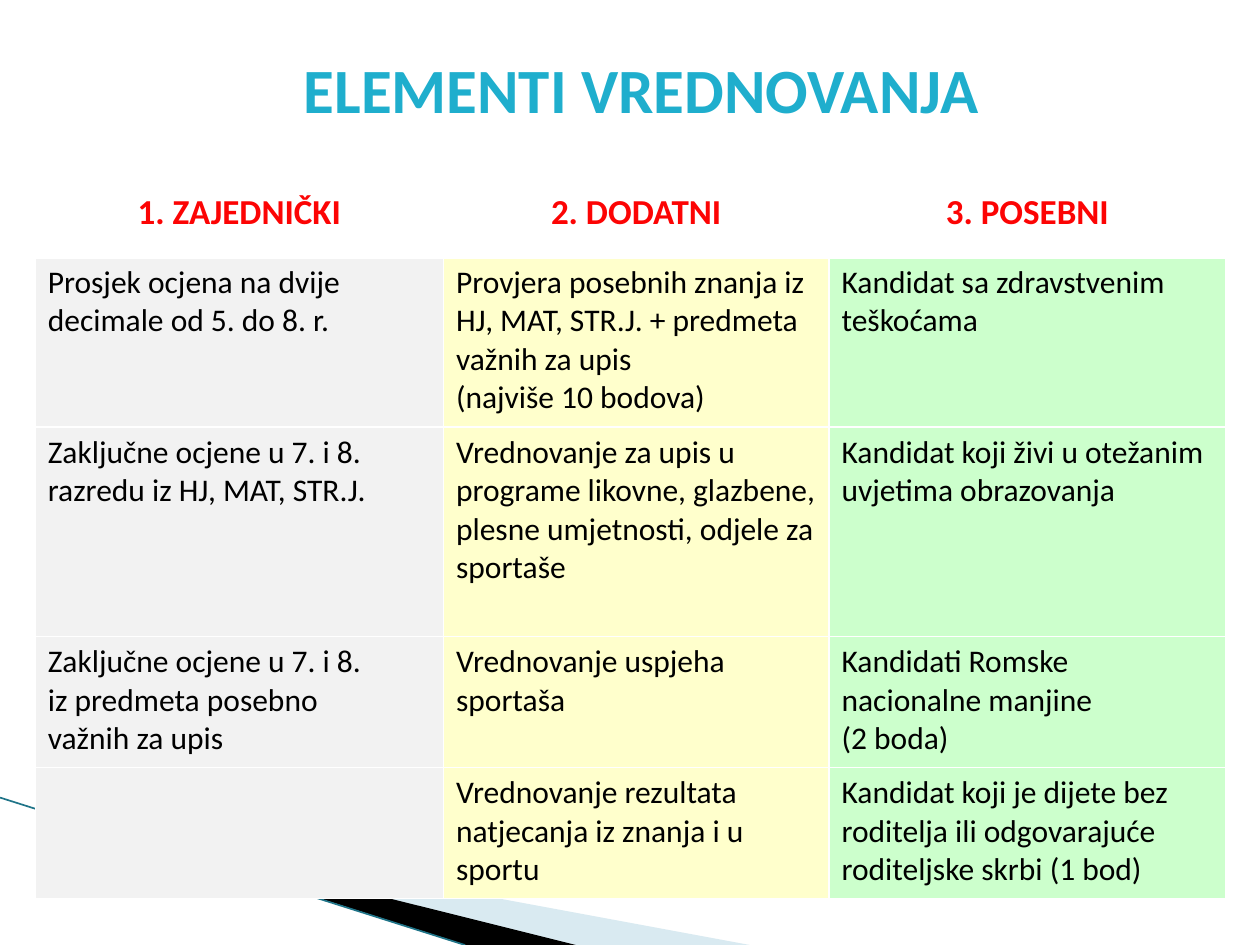
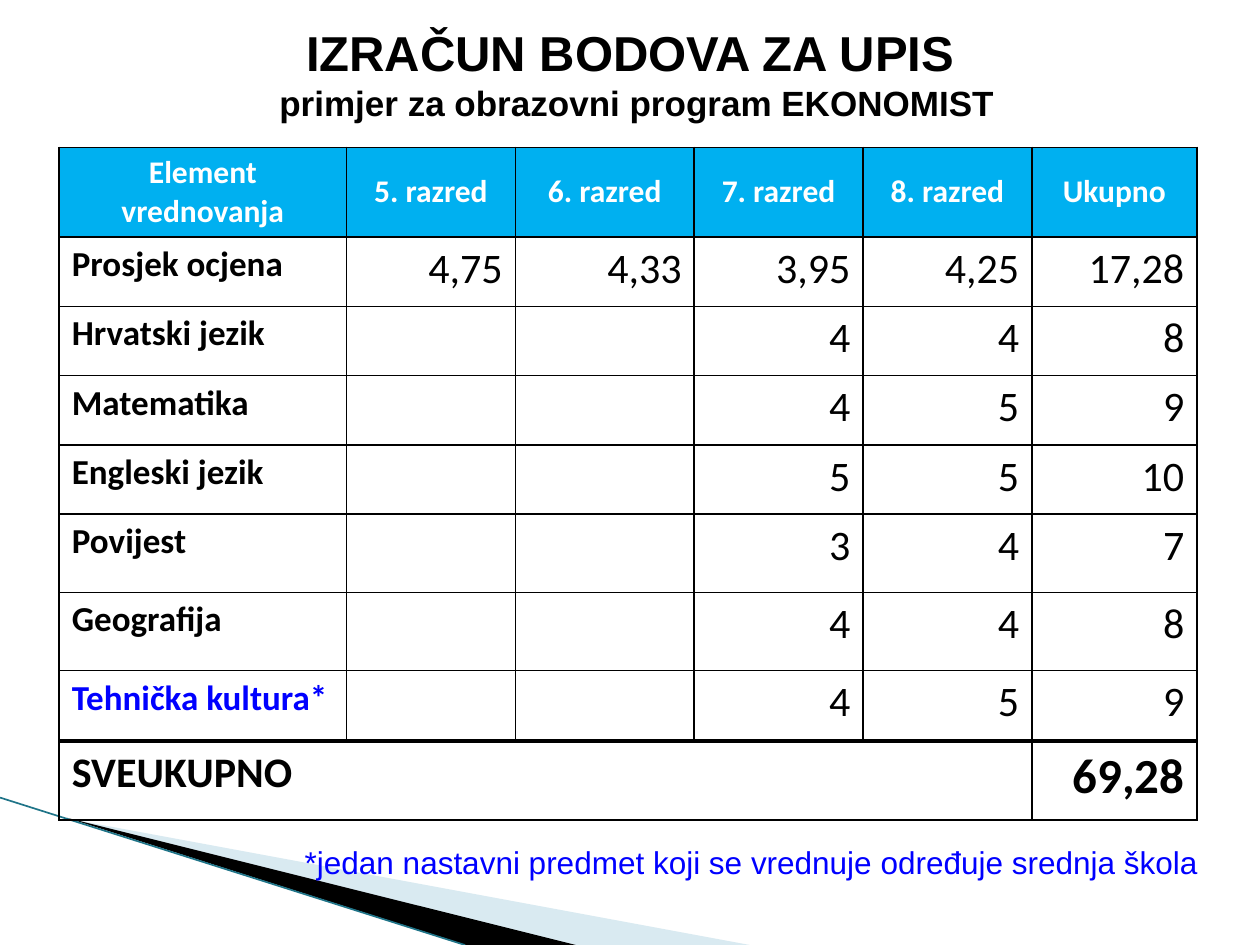
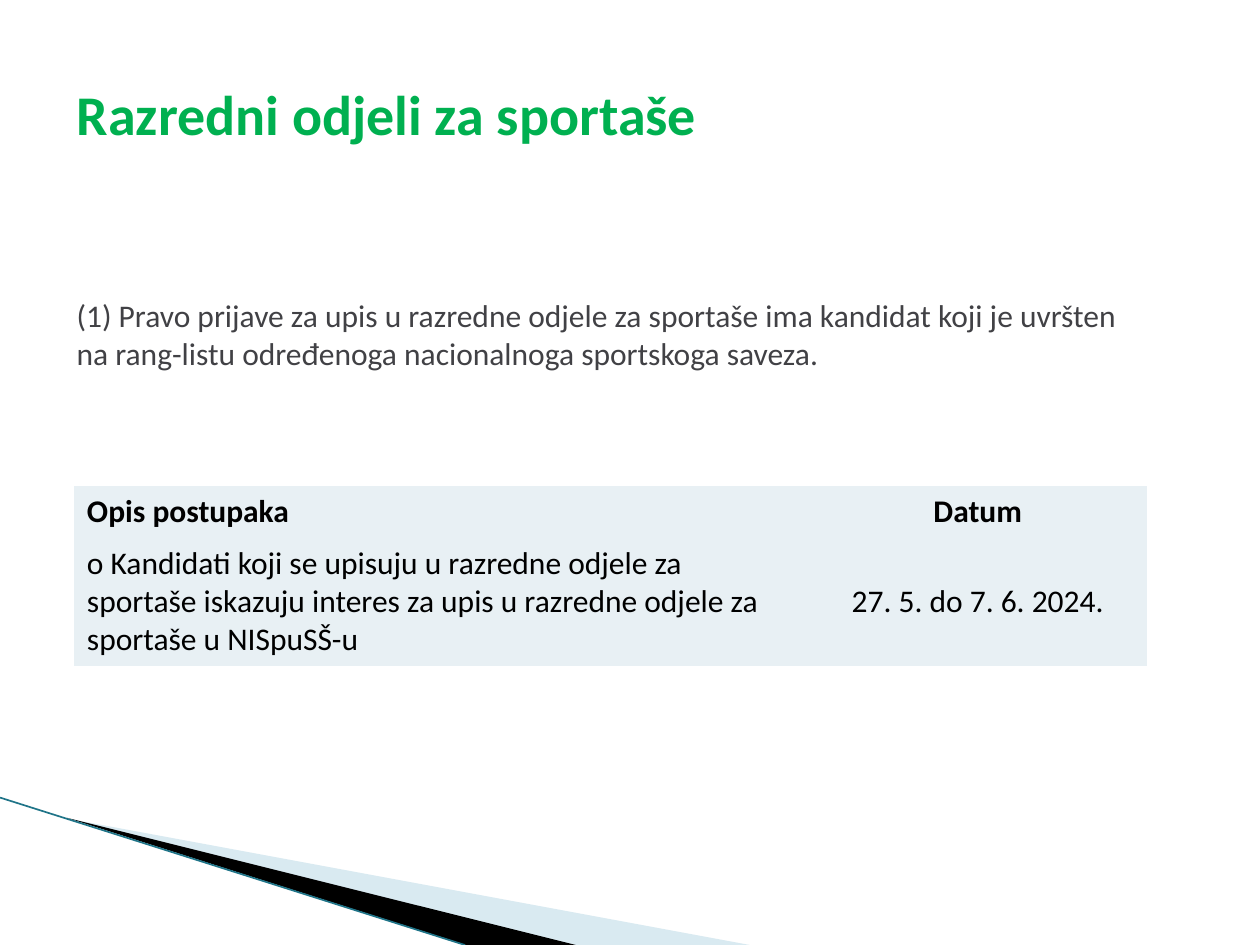
from lxml.etree import SubElement
from pptx import Presentation
from pptx.dml.color import RGBColor
from pptx.enum.shapes import MSO_CONNECTOR
from pptx.enum.text import MSO_ANCHOR as ANCHOR, MSO_AUTO_SIZE as AUTO, PP_ALIGN as AL
from pptx.oxml.ns import qn
from pptx.util import Inches, Pt

C = {
    "black": "000000", "white": "FFFFFF", "red": "FC0404", "teal": "1FAECD",
    "blue": "0000FF", "green": "00B050", "header": "00B0F0", "text": "414145",
    "gray": "F2F2F2", "yellow": "FFFFCC", "mint": "CCFFCC", "ice": "E8F0F4",
    "wedge": "A0CBDC", "edge": "1F7488",
}
NO_STYLE = "{2D5ABB26-0587-4C30-8999-92F81FD0307C}"


def write(p, text, size=18, color="black", bold=False, align=AL.LEFT, font="Calibri"):
    p.text = text
    p.alignment = align
    for r in p.runs:
        r.font.name = font
        r.font.size = Pt(size)
        r.font.bold = bold
        r.font.color.rgb = RGBColor.from_string(C[color])


def make_table(s, x, y, widths, heights, line=None, heavy_row=None, heavy=1):
    frame = s.shapes.add_table(len(heights), len(widths), Inches(x), Inches(y),
                               Inches(sum(widths)), Inches(sum(heights)))
    table = frame.table
    table._tbl.tblPr.find(qn("a:tableStyleId")).text = NO_STYLE
    for col, w in zip(table.columns, widths):
        col.width = Inches(w)
    for i, h in enumerate(heights):
        table.rows[i].height = Inches(h)
        for cell in table.rows[i].cells:
            for side in "LRTB" if line else "":
                thick = (side, i) in (("B", heavy_row), ("T", (heavy_row or 0) + 1))
                ln = SubElement(cell._tc.get_or_add_tcPr(), qn("a:ln" + side),
                                w=str(Pt(heavy if thick else 1)))
                SubElement(SubElement(ln, qn("a:solidFill")), qn("a:srgbClr"), val=C[line])
            cell.fill.background()
    return table


prs = Presentation()
prs.slide_width, prs.slide_height = Inches(10), Inches(7.5)
slides = [prs.slides.add_slide(prs.slide_layouts[5]) for _ in range(3)]

s = slides[0]
decor = []
for color, points in (("wedge", [(55, 650), (595, 750), (456, 750)]),
                      ("black", [(53, 649), (457, 750), (370, 750)])):
    outline = s.shapes.build_freeform(*points[0], scale=Inches(0.01))
    outline.add_line_segments(points[1:], close=True)
    sp = outline.convert_to_shape()
    sp.shadow.inherit = False
    sp.fill.solid()
    sp.fill.fore_color.rgb = RGBColor.from_string(C[color])
    sp.line.fill.background()
    if color == "wedge":
        SubElement(sp.element.spPr.find(".//" + qn("a:srgbClr")), qn("a:alpha"), val="40000")
    decor.append(sp)
edge = s.shapes.add_connector(MSO_CONNECTOR.STRAIGHT, Inches(0), Inches(6.33),
                              Inches(3.69), Inches(7.5))
edge.line.color.rgb = RGBColor.from_string(C["edge"])
edge.line.width = Pt(0.95)
SubElement(edge.element.spPr, qn("a:effectLst"))
for i, sp in enumerate(decor + [edge]):
    prs.slide_master.shapes.element.insert(2 + i, sp.element)

title_boxes = [(0.59, 0.13, 9, 1.14), (0.6, 0.13, 8.91, 0.91), (0.51, 0.35, 6.46, 1.1)]
for s, box in zip(slides, title_boxes):
    title = s.shapes.title
    title.left, title.top, title.width, title.height = map(Inches, box)
    title.text_frame.auto_size = AUTO.NONE
    title.text_frame.vertical_anchor = ANCHOR.MIDDLE

s = slides[0]
write(s.shapes.title.text_frame.paragraphs[0], "ELEMENTI VREDNOVANJA",
      size=36, color="teal", bold=True, align=AL.CENTER)
elements = [
    ["1. ZAJEDNIČKI", "2. DODATNI", "3. POSEBNI"],
    ["Prosjek ocjena na dvije decimale od 5. do 8. r.",
     "Provjera posebnih znanja iz HJ, MAT, STR.J. + predmeta važnih za upis\v(najviše 10 bodova)",
     "Kandidat sa zdravstvenim teškoćama"],
    ["Zaključne ocjene u 7. i 8. razredu iz HJ, MAT, STR.J.",
     "Vrednovanje za upis u programe likovne, glazbene, plesne umjetnosti, odjele za sportaše",
     "Kandidat koji živi u otežanim uvjetima obrazovanja"],
    ["Zaključne ocjene u 7. i 8. \viz predmeta posebno \vvažnih za upis",
     "Vrednovanje uspjeha sportaša",
     "Kandidati Romske nacionalne manjine \v(2 boda)"],
    ["",
     "Vrednovanje rezultata natjecanja iz znanja i u sportu",
     "Kandidat koji je dijete bez roditelja ili odgovarajuće roditeljske skrbi (1 bod)"],
]
table = make_table(s, 0.28, 1.47, [3.24, 3.06, 3.15], [0.57, 1.35, 1.66, 1.04, 1.04],
                   line="white", heavy_row=0, heavy=3)
for i, row in enumerate(elements):
    for j, (text, fill) in enumerate(zip(row, ("gray", "yellow", "mint"))):
        cell = table.cell(i, j)
        cell.fill.solid()
        cell.fill.fore_color.rgb = RGBColor.from_string(C[fill if i else "white"])
        p = cell.text_frame.paragraphs[0]
        if i == 0:
            write(p, text, size=20, color="red", bold=True, align=AL.CENTER)
        elif text:
            write(p, text)

s = slides[1]
tf = s.shapes.title.text_frame
tf.vertical_anchor = ANCHOR.TOP
heading = {"bold": True, "align": AL.CENTER, "font": "Arial"}
write(tf.paragraphs[0], "IZRAČUN BODOVA ZA UPIS ", size=28, **heading)
write(tf.add_paragraph(), "primjer za obrazovni program EKONOMIST", size=20, **heading)
points = [
    ["Element vrednovanja", "5. razred", "6. razred", "7. razred", "8. razred", "Ukupno"],
    ["Prosjek ocjena", "4,75", "4,33", "3,95", "4,25", "17,28"],
    ["Hrvatski jezik", "", "", "4", "4", "8"],
    ["Matematika", "", "", "4", "5", "9"],
    ["Engleski jezik", "", "", "5", "5", "10"],
    ["Povijest", "", "", "3", "4", "7"],
    ["Geografija", "", "", "4", "4", "8"],
    ["Tehnička kultura*", "", "", "4", "5", "9"],
    ["SVEUKUPNO", "", "", "", "", "69,28"],
]
total = len(points) - 1
table = make_table(s, 0.47, 1.17, [2.28, 1.34, 1.42, 1.34, 1.34, 1.31],
                   [0.7] + [0.55] * 4 + [0.62] * 2 + [0.56, 0.63],
                   line="black", heavy_row=total - 1, heavy=2.25)
table.cell(total, 0).merge(table.cell(total, 4))
for i, row in enumerate(points):
    for j, text in enumerate(row):
        cell = table.cell(i, j)
        p = cell.text_frame.paragraphs[0]
        if i == 0:
            cell.fill.solid()
            cell.fill.fore_color.rgb = RGBColor.from_string(C["header"])
            cell.vertical_anchor = ANCHOR.MIDDLE
            write(p, text, color="white", bold=True, align=AL.CENTER)
        elif j == 0:
            write(p, text, size=24 if i == total else 20, bold=True,
                  color="blue" if text.endswith("*") else "black")
        elif text:
            write(p, text, size=28 if i == total else 24, bold=i == total, align=AL.RIGHT)

s = slides[2]
write(s.shapes.title.text_frame.paragraphs[0], "Razredni odjeli za sportaše",
      size=32, color="green", bold=True)
procedure = [
    ["Opis postupaka", "Datum"],
    ["o Kandidati koji se upisuju u razredne odjele za sportaše iskazuju interes za upis "
     "u razredne odjele za sportaše u NISpuSŠ-u", "27. 5. do 7. 6. 2024."],
]
table = make_table(s, 0.59, 3.86, [5.83, 2.68], [0.4, 1.02])
for i, row in enumerate(procedure):
    for j, text in enumerate(row):
        cell = table.cell(i, j)
        cell.fill.solid()
        cell.fill.fore_color.rgb = RGBColor.from_string(C["ice"])
        cell.vertical_anchor = ANCHOR.MIDDLE
        write(cell.text_frame.paragraphs[0], text, bold=i == 0,
              align=AL.CENTER if j else AL.LEFT)

notes = [
    (slides[1], (2.32, 6.64, 7.8, 0.4), "blue", "Arial",
     "*jedan nastavni predmet koji se vrednuje određuje srednja škola"),
    (slides[2], (0.51, 2.3, 8.66, 0.71), "text", "Calibri",
     "(1) Pravo prijave za upis u razredne odjele za sportaše ima kandidat koji je uvršten "
     "na rang-listu određenoga nacionalnoga sportskoga saveza."),
]
for s, box, color, font, text in notes:
    tf = s.shapes.add_textbox(*map(Inches, box)).text_frame
    tf.word_wrap = True
    write(tf.paragraphs[0], text, color=color, font=font)

prs.save("out.pptx")
